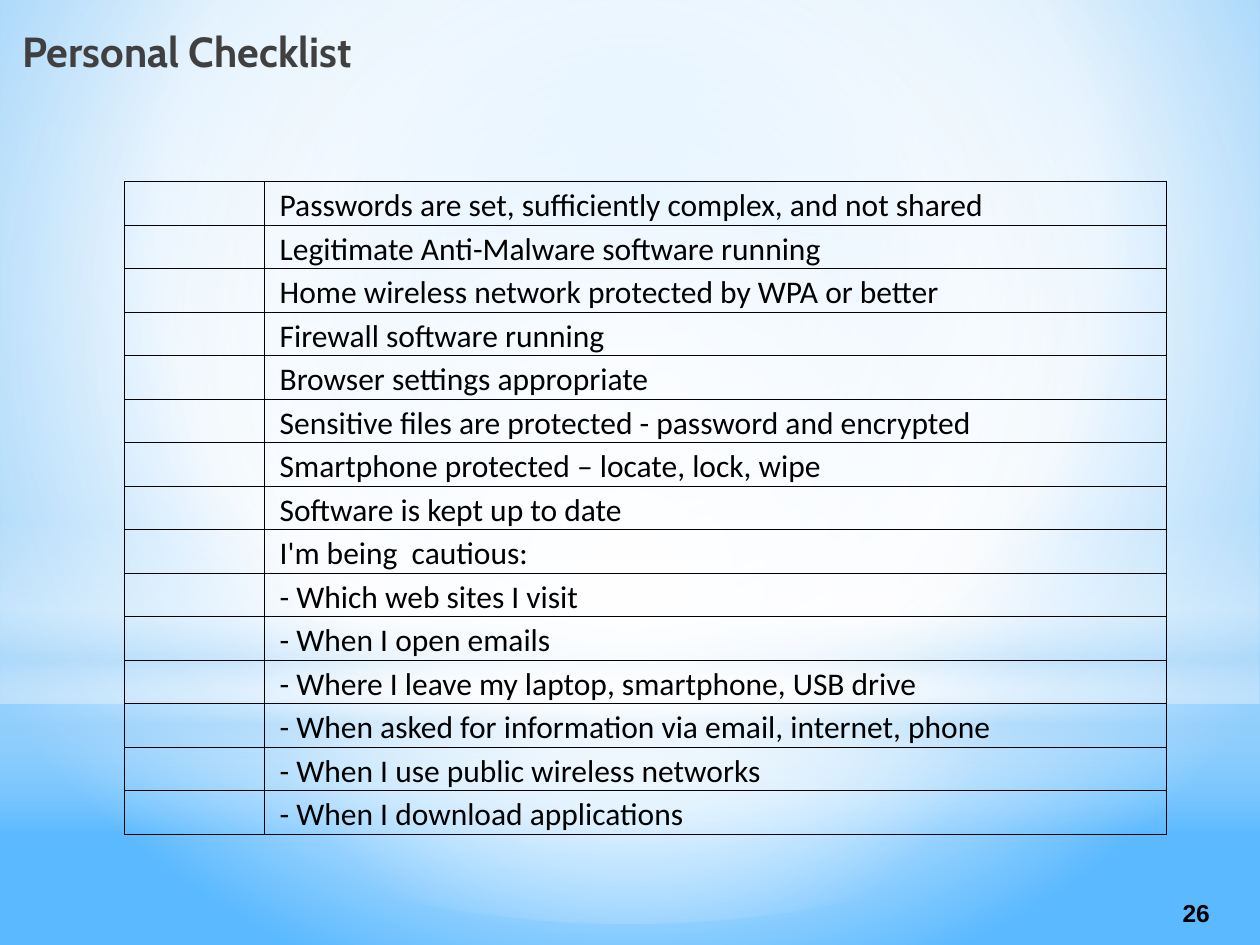
from lxml.etree import SubElement
from pptx import Presentation
from pptx.dml.color import RGBColor
from pptx.enum.shapes import MSO_SHAPE
from pptx.enum.text import MSO_ANCHOR, PP_ALIGN
from pptx.oxml.ns import qn
from pptx.util import Inches, Pt

CHECKS = [
    "Passwords are set, sufficiently complex, and not shared",
    "Legitimate Anti-Malware software running",
    "Home wireless network protected by WPA or better",
    "Firewall software running",
    "Browser settings appropriate",
    "Sensitive files are protected - password and encrypted",
    "Smartphone protected – locate, lock, wipe",
    "Software is kept up to date",
    "I'm being  cautious:",
    "- Which web sites I visit",
    "- When I open emails",
    "- Where I leave my laptop, smartphone, USB drive",
    "- When asked for information via email, internet, phone",
    "- When I use public wireless networks",
    "- When I download applications",
]


def color(value):
    return RGBColor.from_string(value)


def set_gradient(parent, stops, focus=None, angle=90):
    """Swap a solid fill for a gradient; stops are (position, colour, opacity)."""
    solid = parent.find(qn("a:solidFill"))
    gradient = parent.makeelement(qn("a:gradFill"), {"rotWithShape": "1"})
    parent.replace(solid, gradient)
    stop_list = SubElement(gradient, qn("a:gsLst"))
    for position, value, opacity in stops:
        stop = SubElement(stop_list, qn("a:gs"), pos=str(position * 1000))
        shade = SubElement(stop, qn("a:srgbClr"), val=value)
        if opacity < 100:
            SubElement(shade, qn("a:alpha"), val=str(opacity * 1000))
    if focus:
        circle = SubElement(gradient, qn("a:path"), {"path": "circle"})
        edges = {side: str(part * 1000) for side, part in zip("ltrb", focus)}
        SubElement(circle, qn("a:fillToRect"), edges)
    else:
        SubElement(gradient, qn("a:lin"), ang=str(angle * 60000), scaled="0")


def add_glow(page, kind, box, stops, focus=None):
    glow = page.shapes.add_shape(kind, *map(Inches, box))
    glow.shadow.inherit = False
    glow.line.fill.background()
    glow.fill.solid()
    set_gradient(glow._element.spPr, stops, focus)


def write_text(frame, text, size=18, font="Calibri", ink="000000",
               bold=False, align=PP_ALIGN.LEFT):
    para = frame.paragraphs[0]
    para.alignment = align
    span = para.add_run()
    span.text = text
    span.font.size = Pt(size)
    span.font.name = font
    span.font.bold = bold
    span.font.color.rgb = color(ink)


def add_label(page, box, text, **style):
    frame = page.shapes.add_textbox(*map(Inches, box)).text_frame
    frame.word_wrap = True
    frame.vertical_anchor = MSO_ANCHOR.MIDDLE
    write_text(frame, text, **style)


def add_backdrop(page):
    page.background.fill.solid()
    set_gradient(page._element.find(".//" + qn("p:bgPr")),
                 [(0, "9ED5FF", 100), (60, "FFFFFF", 100), (100, "5BB9FF", 100)],
                 (20, 10, 20, 60))
    center = (50, 50, 50, 50)
    # Sky, horizon band and bright oval
    add_glow(page, MSO_SHAPE.RECTANGLE, (0, 0, 10, 5.58),
             [(0, "FFFFFF", 89), (48, "FFFFFF", 62), (100, "B4DCFA", 79)], center)
    add_glow(page, MSO_SHAPE.RECTANGLE, (0, 4.12, 10, 2.5),
             [(0, "FFFFFF", 0), (29, "FFFFFF", 30), (45, "B4DCFA", 40),
              (55, "FFFFFF", 26), (65, "B4DCFA", 60), (100, "FFFFFF", 0)])
    add_glow(page, MSO_SHAPE.OVAL, (0, 1.75, 10, 5.58),
             [(0, "FFFFFF", 100), (56, "FFFFFF", 0)], center)


def set_borders(cell, value="000000", width=0.5):
    properties = cell._tc.get_or_add_tcPr()
    for index, side in enumerate(("lnL", "lnR", "lnT", "lnB")):
        line = properties.makeelement(qn("a:" + side), {"w": str(Pt(width))})
        properties.insert(index, line)
        SubElement(SubElement(line, qn("a:solidFill")), qn("a:srgbClr"), val=value)


def add_checklist(page, box, checks, tick_width=1.11):
    left, top, width, height = box
    table = page.shapes.add_table(len(checks), 2, *map(Inches, box)).table
    table.first_row = table.horz_banding = False
    table.columns[0].width = Inches(tick_width)
    table.columns[1].width = Inches(width - tick_width)
    for row, check in zip(table.rows, checks):
        row.height = Inches(height / len(checks))
        for cell in row.cells:
            cell.fill.background()
            cell.vertical_anchor = MSO_ANCHOR.BOTTOM
            cell.margin_left = Inches(0.12)
            cell.margin_right = cell.margin_top = Inches(0.01)
            cell.margin_bottom = 0
            set_borders(cell)
        write_text(row.cells[1].text_frame, check)


def main():
    deck = Presentation()
    deck.slide_width, deck.slide_height = Inches(10), Inches(7.5)
    page = deck.slides.add_slide(deck.slide_layouts[6])
    add_backdrop(page)
    # Page number and title
    add_label(page, (9.12, 7.08, 0.58, 0.33), "26", size=14, font="Arial",
              bold=True, align=PP_ALIGN.RIGHT)
    add_label(page, (0.08, 0.17, 9.42, 0.47), "Personal Checklist", size=24,
              font="Cabin", ink="404040", bold=True)
    add_checklist(page, (0.99, 1.44, 8.27, 5.18), CHECKS)
    deck.save("out.pptx")


if __name__ == "__main__":
    main()
